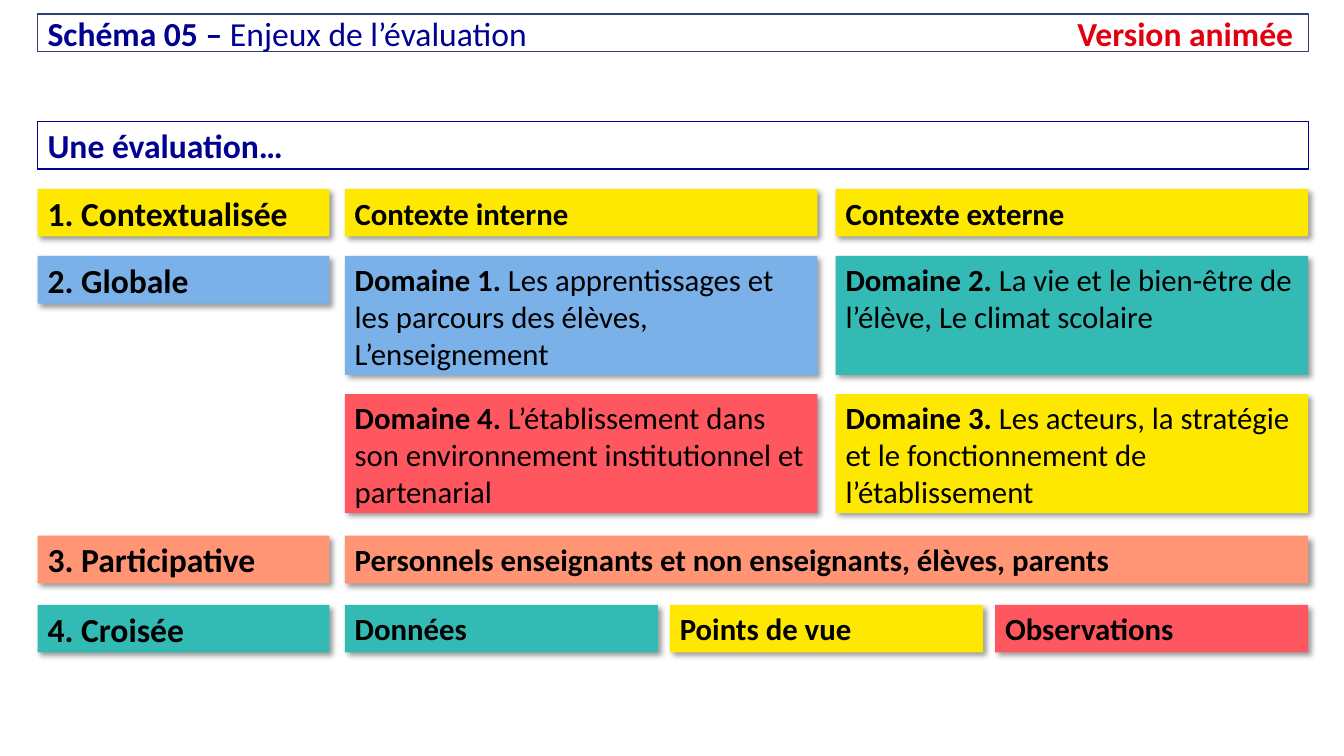
import pptx
import pptx.dml.color
import pptx.enum.shapes
import pptx.enum.text
import pptx.oxml
import pptx.oxml.ns
import pptx.util
import lxml.etree

Cm = pptx.util.Cm
Pt = pptx.util.Pt
RGBColor = pptx.dml.color.RGBColor
ANCHOR = pptx.enum.text.MSO_ANCHOR

BLACK = RGBColor(0x00, 0x00, 0x00)
WHITE = RGBColor(0xFF, 0xFF, 0xFF)
NAVY = RGBColor(0x00, 0x00, 0x91)
SLATE = RGBColor(0x2F, 0x40, 0x77)
SCARLET = RGBColor(0xE1, 0x00, 0x0F)
BLUE = RGBColor(0x7A, 0xB1, 0xE8)
TEAL = RGBColor(0x34, 0xBA, 0xB5)
RED = RGBColor(0xFF, 0x57, 0x5F)
YELLOW = RGBColor(0xFF, 0xE8, 0x00)
ORANGE = RGBColor(0xFF, 0x95, 0x75)

LEFT, RIGHT = 0.95, 32.97
LABEL_WIDTH = 7.35
CONTENT_LEFT = 8.69
BAR_HEIGHT, DOMAIN_HEIGHT = 1.2, 3.0


class SchemaSlide:
    font = "Calibri"
    large, medium = 24, 22

    def __init__(self, deck):
        self.slide = deck.slides.add_slide(deck.slide_layouts[5])

    def place(self, shape, left, top, width, height):
        shape.left, shape.top = Cm(left), Cm(top)
        shape.width, shape.height = Cm(width), Cm(height)

    def add_words(self, shape, runs, size, anchor=ANCHOR.MIDDLE):
        frame = shape.text_frame
        frame.word_wrap = True
        frame.auto_size = pptx.enum.text.MSO_AUTO_SIZE.NONE
        frame.vertical_anchor = anchor
        frame.margin_left = frame.margin_right = Cm(0.25)
        frame.margin_top = frame.margin_bottom = Cm(0.13)
        paragraph = frame.paragraphs[0]
        paragraph.alignment = pptx.enum.text.PP_ALIGN.LEFT
        for words, bold, color in runs:
            run = paragraph.add_run()
            run.text = words
            run.font.name = self.font
            run.font.size = Pt(size)
            run.font.bold = bold
            run.font.color.rgb = color
        return paragraph

    def outline(self, shape, color):
        shape.line.color.rgb = color
        shape.line.width = Pt(1)

    def title(self, runs, tab):
        title = self.slide.shapes.title
        self.place(title, LEFT, 0.35, RIGHT - LEFT, 0.95)
        self.outline(title, SLATE)
        properties = self.add_words(title, runs, self.large)._p.get_or_add_pPr()
        stops = lxml.etree.SubElement(properties, pptx.oxml.ns.qn("a:tabLst"))
        lxml.etree.SubElement(stops, pptx.oxml.ns.qn("a:tab"), pos=str(Cm(tab)), algn="r")

    def box(self, left, top, width, height, fill):
        box = self.slide.shapes.add_shape(
            pptx.enum.shapes.MSO_SHAPE.RECTANGLE, Cm(left), Cm(top), Cm(width), Cm(height))
        box.shadow.inherit = False
        box.fill.solid()
        box.fill.fore_color.rgb = fill
        box.line.fill.background()
        return box

    def cast_shadow(self, box):
        effects = box._element.spPr.find(pptx.oxml.ns.qn("a:effectLst"))
        effects.append(pptx.oxml.parse_xml(
            f'<a:outerShdw {pptx.oxml.ns.nsdecls("a")} blurRad="{Pt(4)}" dist="{Pt(3)}" '
            'dir="2700000" algn="tl" rotWithShape="0">'
            '<a:srgbClr val="000000"><a:alpha val="40000"/></a:srgbClr></a:outerShdw>'))

    def heading(self, words, top):
        heading = self.box(LEFT, top, RIGHT - LEFT, BAR_HEIGHT, WHITE)
        self.outline(heading, NAVY)
        self.add_words(heading, [(words, True, NAVY)], self.large)

    def label(self, words, top, fill):
        label = self.box(LEFT, top, LABEL_WIDTH, BAR_HEIGHT, fill)
        self.cast_shadow(label)
        self.add_words(label, [(words, True, BLACK)], self.large)

    def row(self, top, height, gap, cells, anchor=ANCHOR.MIDDLE):
        width = (RIGHT - CONTENT_LEFT - gap * (len(cells) - 1)) / len(cells)
        for column, (fill, lead, *details) in enumerate(cells):
            cell = self.box(CONTENT_LEFT + column * (width + gap), top, width, height, fill)
            self.cast_shadow(cell)
            runs = [(lead, True, BLACK)] + [(detail, False, BLACK) for detail in details]
            self.add_words(cell, runs, self.medium, anchor)


def main():
    deck = pptx.Presentation()
    deck.slide_width, deck.slide_height = Cm(33.87), Cm(19.05)
    schema = SchemaSlide(deck)

    schema.title([("Schéma 05 – ", True, NAVY),
                  ("Enjeux de l’évaluation\t", False, NAVY),
                  ("Version animée", True, SCARLET)], tab=31.39)
    schema.heading("Une évaluation…", 3.06)

    for words, top, fill in [("1. Contextualisée", 4.76, YELLOW),
                             ("2. Globale", 6.45, BLUE),
                             ("3. Participative", 13.5, ORANGE),
                             ("4. Croisée", 15.24, TEAL)]:
        schema.label(words, top, fill)

    schema.row(4.76, BAR_HEIGHT, 0.46, [(YELLOW, "Contexte interne"),
                                        (YELLOW, "Contexte externe")])
    schema.row(6.45, DOMAIN_HEIGHT, 0.46, [
        (BLUE, "Domaine 1. ", "Les apprentissages et les parcours des élèves, L’enseignement"),
        (TEAL, "Domaine 2. ", "La vie et le bien-être de l’élève, Le climat scolaire"),
    ], ANCHOR.TOP)
    schema.row(9.93, DOMAIN_HEIGHT, 0.46, [
        (RED, "Domaine 4. ",
         "L’établissement dans son environnement institutionnel et partenarial"),
        (YELLOW, "Domaine 3. ",
         "Les acteurs, la stratégie et le fonctionnement de l’établissement"),
    ], ANCHOR.TOP)
    schema.row(13.5, BAR_HEIGHT, 0, [
        (ORANGE, "Personnels enseignants et non enseignants, élèves, parents")])
    schema.row(15.24, BAR_HEIGHT, 0.3, [(TEAL, "Données"),
                                        (YELLOW, "Points de vue"),
                                        (RED, "Observations")])

    deck.save("out.pptx")


if __name__ == "__main__":
    main()
